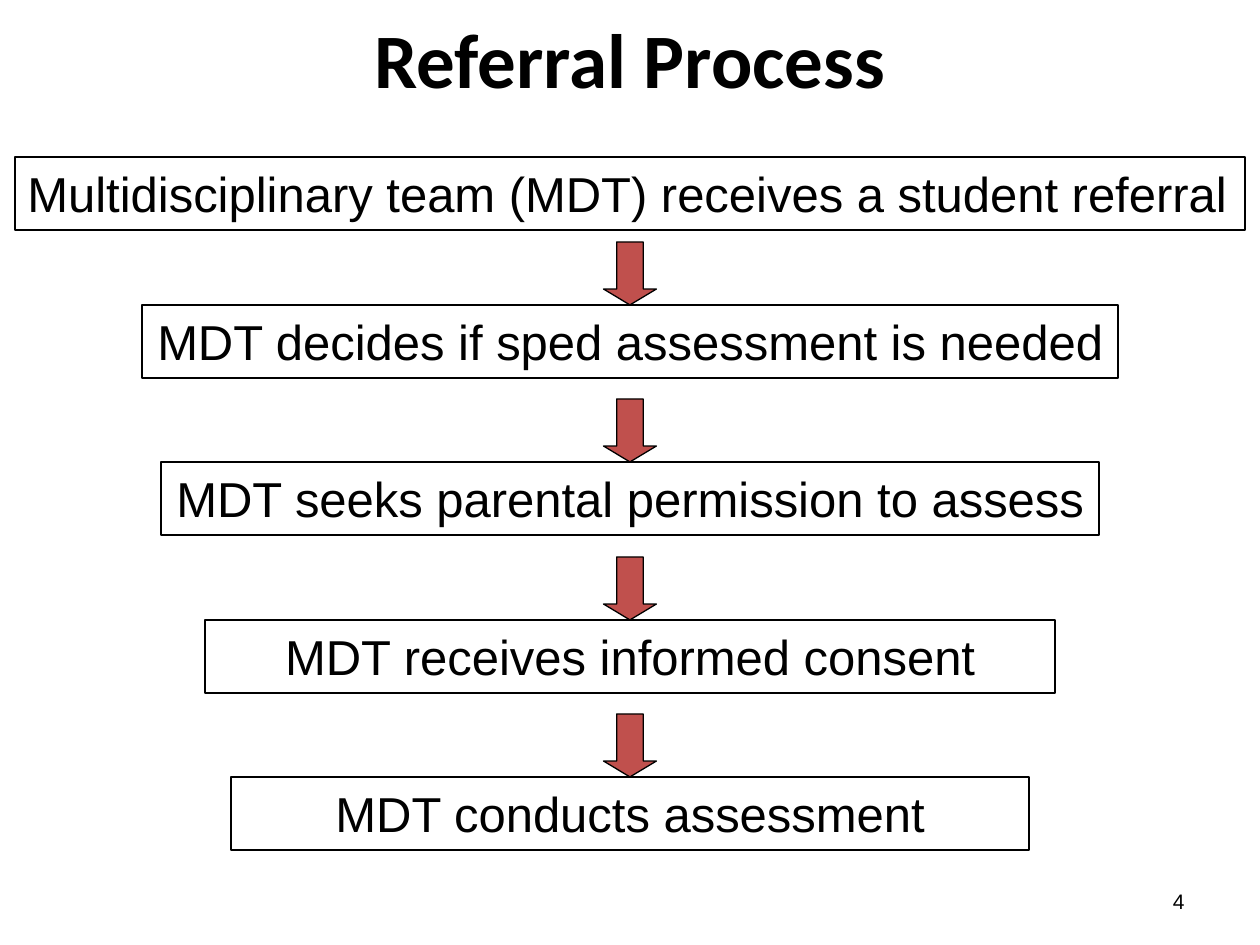
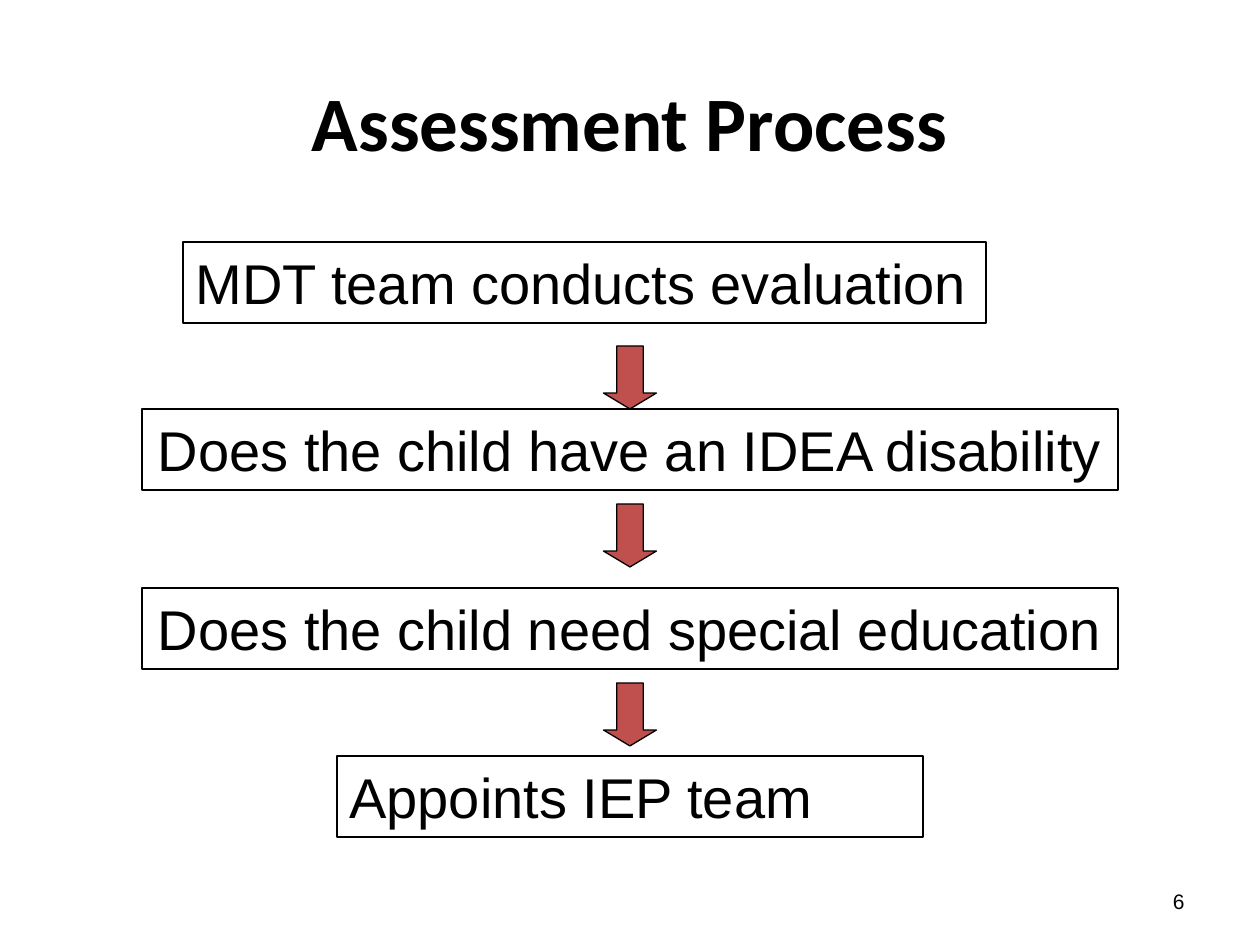
"""Build two process slides, each a column of boxes linked by block arrows."""
from dataclasses import dataclass

from pptx import Presentation
from pptx.dml.color import RGBColor
from pptx.enum.shapes import MSO_SHAPE
from pptx.enum.text import MSO_ANCHOR, PP_ALIGN
from pptx.util import Emu, Pt

RECT, DOWN_ARROW = MSO_SHAPE.RECTANGLE, MSO_SHAPE.DOWN_ARROW
TOP, MIDDLE = MSO_ANCHOR.TOP, MSO_ANCHOR.MIDDLE
LEFT, CENTER, RIGHT = PP_ALIGN.LEFT, PP_ALIGN.CENTER, PP_ALIGN.RIGHT

PX_PER_INCH = 126
SLIDE_W, SLIDE_H = 1260, 945
BLACK, RED = "000000", "C0504D"
BODY_FONT, TITLE_FONT = "Arial", "Calibri"
ARROW_W, ARROW_H = 53, 63
TITLE_H = 115


@dataclass(frozen=True)
class Step:
    text: str
    top: int
    width: int
    align: PP_ALIGN = CENTER
    left: int | None = None
    arrow_gap: int = 0


@dataclass(frozen=True)
class Process:
    title: str
    title_top: int
    title_w: int
    number: str
    size: int
    box_h: int
    steps: tuple[Step, ...]


PROCESSES = (
    Process("Referral Process", 0, 950, "4", 28, 73, (
        Step("Multidisciplinary team (MDT) receives a student referral", 157, 1230, LEFT),
        Step("MDT decides if sped assessment is needed", 305, 976),
        Step("MDT seeks parental permission to assess", 462, 938),
        Step("MDT receives informed consent", 620, 850),
        Step("MDT conducts assessment", 777, 798),
    )),
    Process("Assessment Process", 63, 1080, "6", 32, 81, (
        Step("MDT team conducts evaluation", 242, 803, LEFT, left=183),
        Step("Does the child have an IDEA disability", 409, 976),
        Step("Does the child need special education", 588, 976, arrow_gap=21),
        Step("Appoints IEP team", 756, 586, LEFT, arrow_gap=10),
    )),
)


def px(n: float) -> Emu:
    """Turn pixels into EMU."""
    return Emu(round(n * 914400 / PX_PER_INCH))


def rgb(value: str) -> RGBColor:
    """Turn a hex string into a colour."""
    return RGBColor.from_string(value)


def centred(width: int) -> float:
    """Return the left edge that centres a width on the slide."""
    return (SLIDE_W - width) / 2


def place(sp, left: float, top: int, width: int, height: int) -> None:
    """Move and size a shape."""
    sp.left, sp.top, sp.width, sp.height = px(left), px(top), px(width), px(height)


def write(sp, text: str, size: int, align: PP_ALIGN, anchor: MSO_ANCHOR,
          font: str = BODY_FONT, bold: bool = False) -> None:
    """Fill a shape with one formatted paragraph."""
    tf = sp.text_frame
    tf.word_wrap = True
    tf.vertical_anchor = anchor
    p = tf.paragraphs[0]
    p.text = text
    p.alignment = align
    p.font.name, p.font.size, p.font.bold = font, Pt(size), bold
    p.font.color.rgb = rgb(BLACK)


def add_outlined(slide, kind: MSO_SHAPE, left: float, top: int, width: int,
                 height: int, line_pt: float, fill: str | None = None):
    """Add a black-outlined shape with an optional fill."""
    sp = slide.shapes.add_shape(kind, px(left), px(top), px(width), px(height))
    sp.shadow.inherit = False
    sp.line.color.rgb = rgb(BLACK)
    sp.line.width = Pt(line_pt)
    if fill:
        sp.fill.solid()
        sp.fill.fore_color.rgb = rgb(fill)
    else:
        sp.fill.background()
    return sp


def add_step(slide, step: Step, process: Process) -> None:
    """Draw one boxed step."""
    left = centred(step.width) if step.left is None else step.left
    sp = add_outlined(slide, RECT, left, step.top, step.width, process.box_h, 1)
    write(sp, step.text, process.size, step.align, TOP)


def add_arrow(slide, step: Step) -> None:
    """Draw the block arrow that leads down to a step."""
    top = step.top - step.arrow_gap - ARROW_H
    sp = add_outlined(slide, DOWN_ARROW, centred(ARROW_W), top, ARROW_W, ARROW_H,
                      0.75, RED)
    sp.adjustments[0], sp.adjustments[1] = 0.5, 0.3


def add_process(prs, process: Process) -> None:
    """Add a slide with its title, number, steps and arrows."""
    slide = prs.slides.add_slide(prs.slide_layouts[5])
    title = slide.shapes.title
    place(title, centred(process.title_w), process.title_top, process.title_w, TITLE_H)
    write(title, process.title, 44, CENTER, MIDDLE, TITLE_FONT, bold=True)
    number = slide.shapes.add_textbox(px(903), px(876), px(294), px(50))
    write(number, process.number, 12, RIGHT, MIDDLE)
    for step in process.steps:
        add_step(slide, step, process)
    for step in process.steps[1:]:
        add_arrow(slide, step)


def main() -> None:
    """Build and save the presentation."""
    prs = Presentation()
    prs.slide_width, prs.slide_height = px(SLIDE_W), px(SLIDE_H)
    for process in PROCESSES:
        add_process(prs, process)
    prs.save("out.pptx")


if __name__ == "__main__":
    main()
